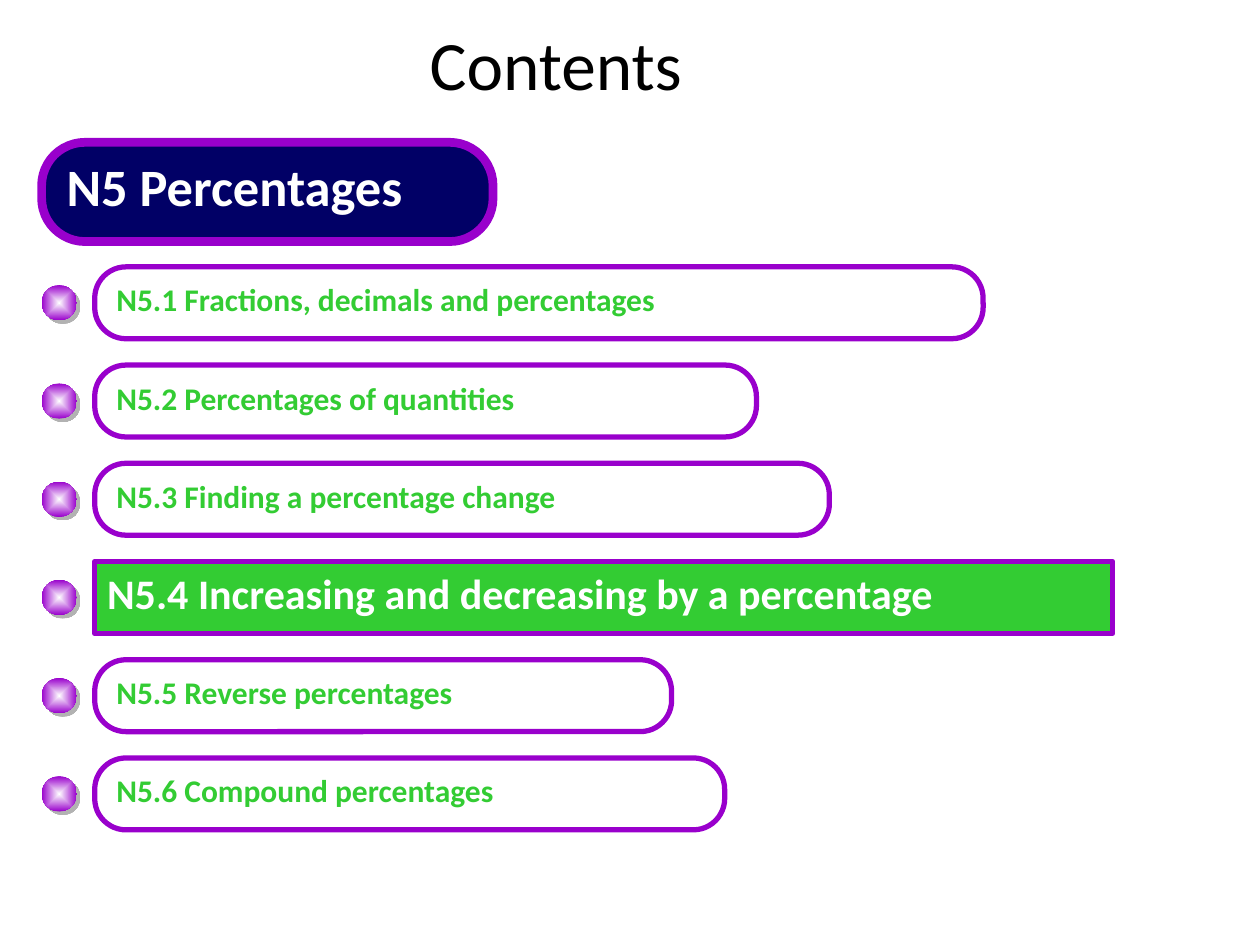
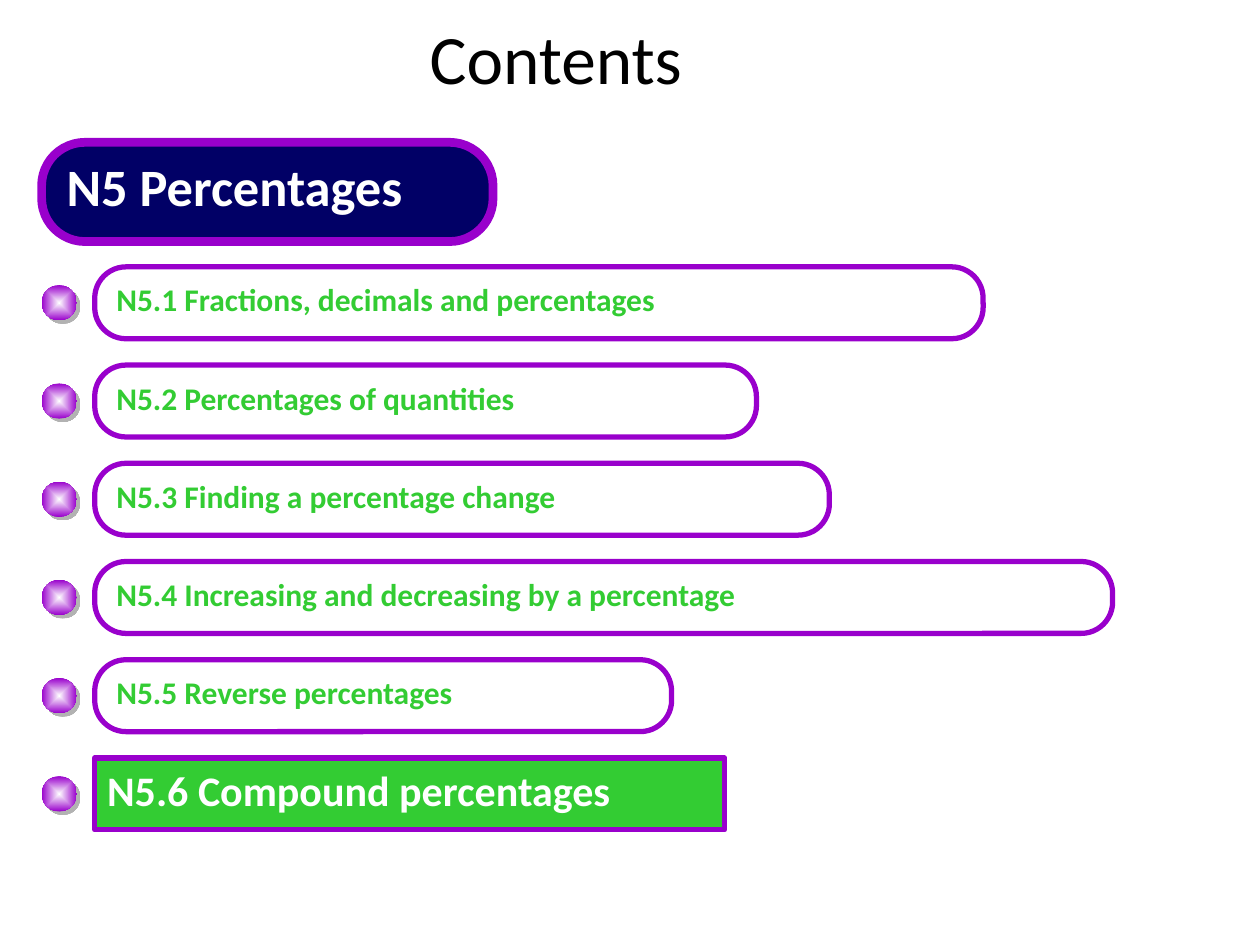
from dataclasses import dataclass

from lxml.etree import SubElement
from pptx import Presentation
from pptx.dml.color import RGBColor
from pptx.enum.shapes import MSO_SHAPE
from pptx.enum.text import MSO_ANCHOR, PP_ALIGN
from pptx.oxml import parse_xml
from pptx.oxml.ns import nsdecls, qn
from pptx.util import Cm, Pt


@dataclass(frozen=True)
class Theme:
    """Colours, font and type sizes of the deck."""
    font: str = "Calibri"
    purple: str = "9900CC"
    navy: str = "010066"
    green: str = "33CC33"
    white: str = "FFFFFF"
    black: str = "000000"
    shadow: str = "B2B2B2"
    title_size: float = 39.6
    heading_size: float = 30
    current_size: float = 24
    topic_size: float = 18


@dataclass(frozen=True)
class Box:
    """A rectangle in centimetres."""
    left: float
    top: float
    width: float
    height: float

    def lengths(self):
        """Return the four sides as slide lengths."""
        return Cm(self.left), Cm(self.top), Cm(self.width), Cm(self.height)


THEME = Theme()
CORNER = 0.436
LIST_BOX = Box(0.84, 5.38, 21.6, 11.35)
ROW_PITCH, BAR_HEIGHT, BAR_INDENT, BULLET = 1.98, 1.45, 1.07, 0.71
TOPICS = [
    ("N5.1 Fractions, decimals and percentages", 17.91),
    ("N5.2 Percentages of quantities", 13.34),
    ("N5.3 Finding a percentage change", 14.81),
    ("N5.4 Increasing and decreasing by a percentage", 20.52),
    ("N5.5 Reverse percentages", 11.63),
    ("N5.6 Compound percentages", 12.7),
]


def write(shape, text, size, color, anchor, bold=True, spacing=None, align=PP_ALIGN.LEFT):
    """Put one formatted line of text in a shape."""
    frame = shape.text_frame
    frame.word_wrap = True
    frame.vertical_anchor = anchor
    para = frame.paragraphs[0]
    para.alignment = align
    para.line_spacing = spacing
    span = para.add_run()
    span.text = text
    span.font.name = THEME.font
    span.font.size = Pt(size)
    span.font.bold = bold
    span.font.color.rgb = RGBColor.from_string(color)


def add_panel(page, box, kind, fill, line_width):
    """Add a filled panel with a purple outline."""
    panel = page.shapes.add_shape(kind, *box.lengths())
    panel.shadow.inherit = False
    if kind == MSO_SHAPE.ROUNDED_RECTANGLE:
        panel.adjustments[0] = CORNER
    panel.fill.solid()
    panel.fill.fore_color.rgb = RGBColor.from_string(fill)
    panel.line.color.rgb = RGBColor.from_string(THEME.purple)
    panel.line.width = Pt(line_width)
    return panel


def add_title(page, box):
    """Add the centred page title."""
    title = page.shapes.add_textbox(*box.lengths())
    write(title, "Contents", THEME.title_size, THEME.black, MSO_ANCHOR.MIDDLE,
          bold=False, align=PP_ALIGN.CENTER)


def add_heading(page, box):
    """Add the unit heading."""
    heading = add_panel(page, box, MSO_SHAPE.ROUNDED_RECTANGLE, THEME.navy, 5)
    write(heading, "N5 Percentages", THEME.heading_size, THEME.white,
          MSO_ANCHOR.TOP, spacing=0.9)


def add_bullet(page, box):
    """Add a glowing bullet with a hard shadow."""
    bullet = page.shapes.add_shape(MSO_SHAPE.OVAL, *box.lengths())
    bullet.line.fill.background()
    bullet.shadow.inherit = False
    properties = bullet._element.spPr
    properties.insert(2, parse_xml(
        f'<a:gradFill {nsdecls("a")} rotWithShape="1"><a:gsLst>'
        f'<a:gs pos="0"><a:srgbClr val="{THEME.white}"/></a:gs>'
        f'<a:gs pos="100000"><a:srgbClr val="{THEME.purple}"/></a:gs></a:gsLst>'
        '<a:path path="shape"><a:fillToRect l="50000" t="50000" r="50000" b="50000"/>'
        '</a:path></a:gradFill>'))
    shadow = SubElement(properties.find(qn("a:effectLst")), qn("a:outerShdw"),
                        dist=str(Pt(2.8)), dir="2700000", algn="ctr", rotWithShape="0")
    SubElement(shadow, qn("a:srgbClr"), val=THEME.shadow)


def add_topic(page, box, text, is_current):
    """Add a topic bar, highlighted when it is the current one."""
    if is_current:
        kind, fill, color, size = (MSO_SHAPE.RECTANGLE, THEME.green,
                                   THEME.white, THEME.current_size)
    else:
        kind, fill, color, size = (MSO_SHAPE.ROUNDED_RECTANGLE, THEME.white,
                                   THEME.green, THEME.topic_size)
    bar = add_panel(page, box, kind, fill, 3)
    bar.text_frame.margin_top = bar.text_frame.margin_bottom = 0
    write(bar, text, size, color, MSO_ANCHOR.MIDDLE, spacing=0.8)


def add_topic_list(page, box, current):
    """Stack the bulleted topics down the box."""
    for row, (text, width) in enumerate(TOPICS):
        top = box.top + row * ROW_PITCH
        add_bullet(page, Box(box.left, top + (BAR_HEIGHT - BULLET) / 2, BULLET, BULLET))
        add_topic(page, Box(box.left + BAR_INDENT, top, width, BAR_HEIGHT),
                  text, row == current)


def add_contents_page(deck, current, title_height):
    """Add a contents page that highlights one topic."""
    page = deck.slides.add_slide(deck.slide_layouts[6])
    add_title(page, Box(0.41, 0.41, 21.59, title_height))
    add_heading(page, Box(0.84, 2.87, 9.1, 2))
    add_topic_list(page, LIST_BOX, current)


def main():
    """Build and save the deck."""
    deck = Presentation()
    deck.slide_width, deck.slide_height = Cm(25.4), Cm(19.05)
    add_contents_page(deck, current=3, title_height=1.7)
    add_contents_page(deck, current=5, title_height=1.47)
    deck.save("out.pptx")


if __name__ == "__main__":
    main()
